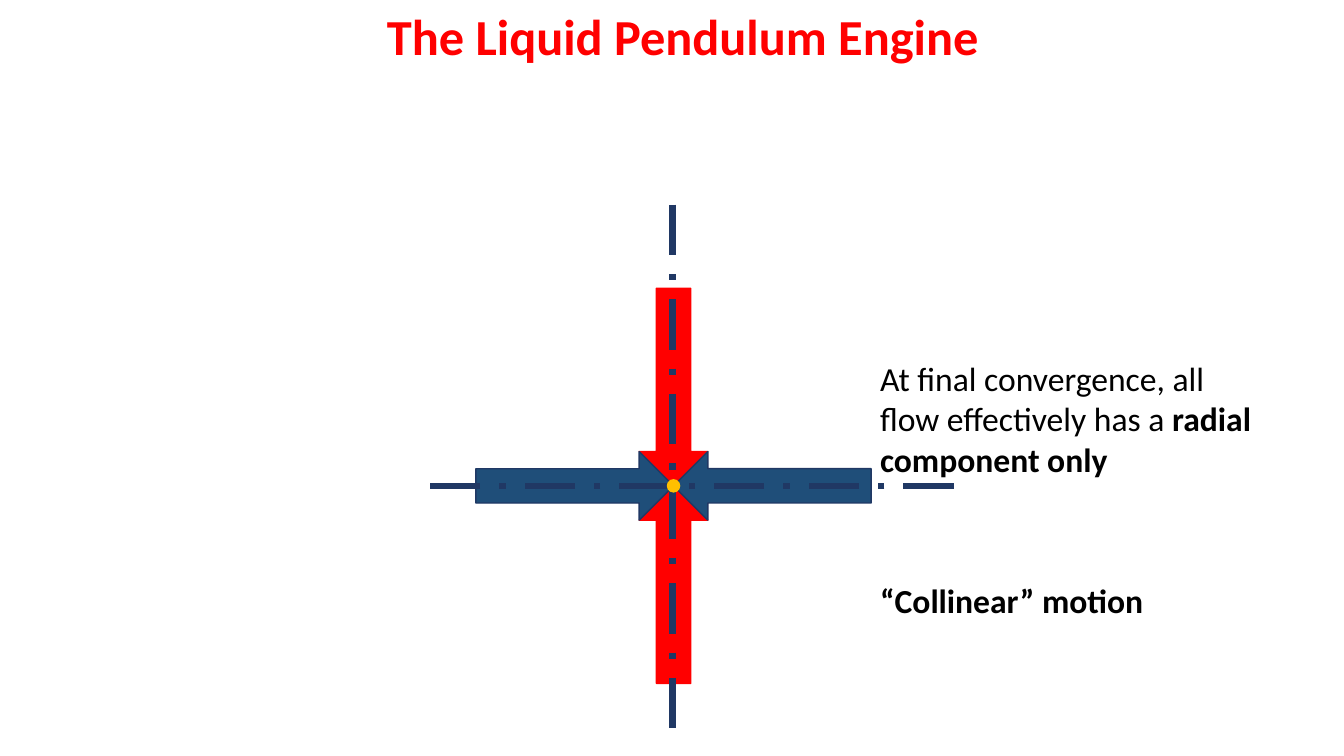
"""Build the slide on the liquid pendulum engine with four converging arrows."""
import math
import pptx
import pptx.util
import pptx.dml.color
import pptx.enum.dml
import pptx.enum.shapes
import pptx.enum.text
import pptx.oxml

Inches, Pt = pptx.util.Inches, pptx.util.Pt
RGB = pptx.dml.color.RGBColor.from_string
KIND = pptx.enum.shapes.MSO_SHAPE
ALIGN = pptx.enum.text.PP_ALIGN

THEME = {
    "font": "Calibri", "title": 36, "body": 24,
    "red": "FF0000", "blue": "1F4E79", "navy": "203864",
    "gold": "FFC000", "black": "000000",
    "edge": 1, "axis": 4.5,
}

TEXTS = [
    ((2.31, 0, 8.93, 0.71), [("The Liquid Pendulum Engine", True)],
     "title", "red", ALIGN.CENTER),
    ((8.63, 3.5, 3.93, 1.31),
     [("At final convergence, all flow effectively has a ", False),
      ("radial component only", True)], "body", "black", ALIGN.LEFT),
    ((8.63, 5.7, 3.88, 0.5), [("“Collinear” motion", True)],
     "body", "black", ALIGN.LEFT),
]
HUB = (6.68, 4.82)
ARROW = (0.68, 1.96)
DOT = (0.12, 0.12)
FLOWS = [(0, "red", "red"), (180, "red", "red"),
         (270, "blue", "navy"), (90, "blue", "navy")]
AXES = [((9.46, 4.82), (4.22, 4.82)), ((6.67, 2.03), (6.67, 7.27))]


def add_shape(slide, kind, mid, size, fill, edge):
    left, top = (m - s / 2 for m, s in zip(mid, size))
    shape = slide.shapes.add_shape(kind, *map(Inches, (left, top, *size)))
    shape.shadow.inherit = False
    shape.fill.solid()
    shape.fill.fore_color.rgb = RGB(THEME[fill])
    shape.line.color.rgb = RGB(THEME[edge])
    shape.line.width = Pt(THEME["edge"])
    return shape


def add_flow(slide, angle, fill, edge):
    turn, reach = math.radians(angle), ARROW[1] / 2
    mid = (HUB[0] + reach * math.sin(turn), HUB[1] - reach * math.cos(turn))
    add_shape(slide, KIND.DOWN_ARROW, mid, ARROW, fill, edge).rotation = angle


def add_axis(slide, start, end):
    axis = slide.shapes.add_connector(
        pptx.enum.shapes.MSO_CONNECTOR.STRAIGHT, *map(Inches, start + end))
    axis.line.color.rgb = RGB(THEME["navy"])
    axis.line.width = Pt(THEME["axis"])
    axis.line.dash_style = pptx.enum.dml.MSO_LINE.LONG_DASH_DOT
    axis._element.spPr.append(pptx.oxml.parse_xml(
        '<a:effectLst xmlns:a='
        '"http://schemas.openxmlformats.org/drawingml/2006/main"/>'))


def add_text(slide, box, runs, size, color, align):
    frame = slide.shapes.add_textbox(*map(Inches, box)).text_frame
    frame.word_wrap = True
    frame.auto_size = pptx.enum.text.MSO_AUTO_SIZE.SHAPE_TO_FIT_TEXT
    para = frame.paragraphs[0]
    para.alignment = align
    para.font.name = THEME["font"]
    para.font.size = Pt(THEME[size])
    para.font.color.rgb = RGB(THEME[color])
    for words, bold in runs:
        run = para.add_run()
        run.text = words
        run.font.bold = bold


def main():
    deck = pptx.Presentation()
    deck.slide_width, deck.slide_height = Inches(13.33), Inches(7.5)
    slide = deck.slides.add_slide(deck.slide_layouts[6])
    for flow in FLOWS:
        add_flow(slide, *flow)
    for axis in AXES:
        add_axis(slide, *axis)
    add_shape(slide, KIND.OVAL, HUB, DOT, "gold", "gold")
    for text in TEXTS:
        add_text(slide, *text)
    deck.save("out.pptx")


if __name__ == "__main__":
    main()
